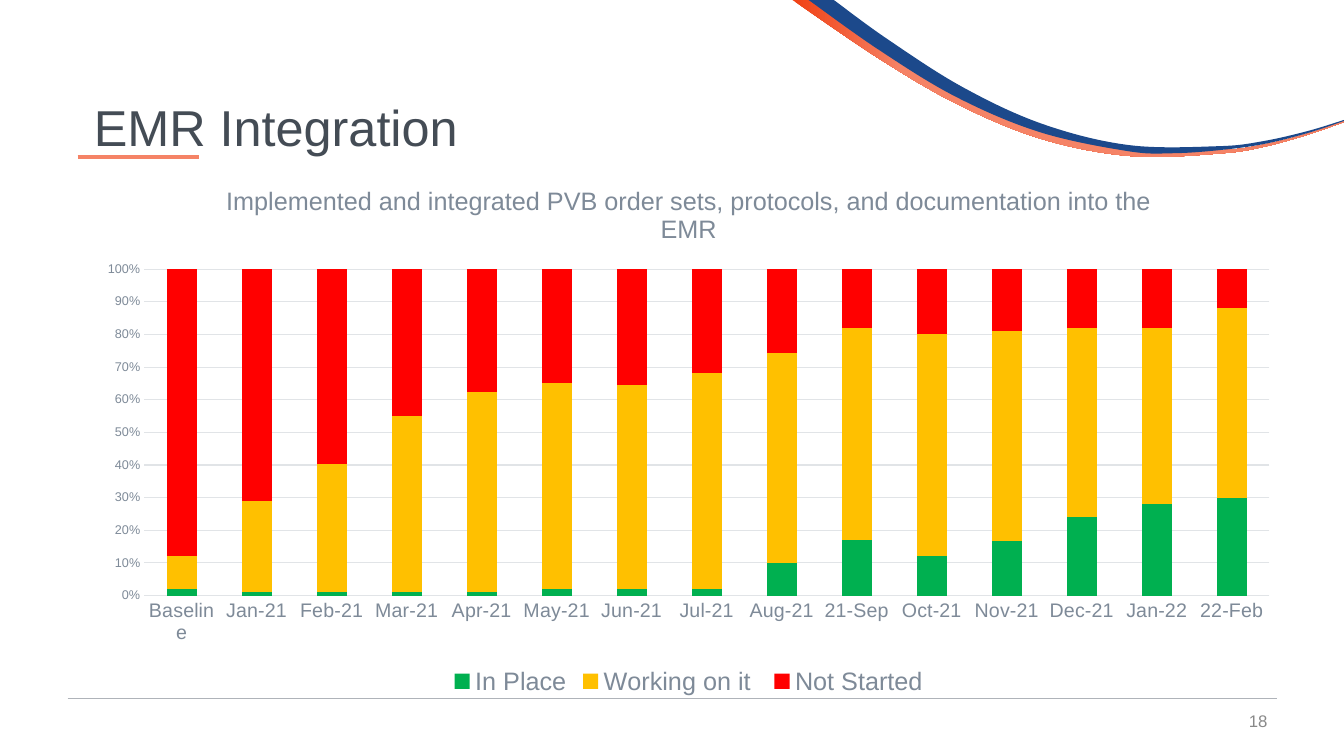
import pptx
import pptx.chart.data
import pptx.dml.color
import pptx.enum.chart
import pptx.enum.shapes
import pptx.enum.text
import pptx.oxml
import pptx.oxml.ns
import pptx.util

RGB = pptx.dml.color.RGBColor
Inches = pptx.util.Inches
Pt = pptx.util.Pt
XL = pptx.enum.chart
TXT = pptx.enum.text
qn = pptx.oxml.ns.qn

WHITE = RGB(0xFF, 0xFF, 0xFF)
INK = RGB(0x44, 0x4C, 0x55)
SLATE = RGB(0x7E, 0x8A, 0x98)
GRAY = RGB(0x89, 0x89, 0x89)
RULE = RGB(0xAF, 0xB3, 0xB9)
GRID = RGB(0xE1, 0xE4, 0xE7)
FLAME = RGB(0xF0, 0x41, 0x15)
CORAL = RGB(0xF5, 0x83, 0x66)
NAVY = RGB(0x1C, 0x49, 0x8B)
GREEN = RGB(0x00, 0xB0, 0x50)
AMBER = RGB(0xFF, 0xC0, 0x00)
RED = RGB(0xFF, 0x00, 0x00)

WIDE, HIGH = 13.33, 7.5
LEFT, TOP, SPAN, TALL = 0.83, 1.62, 12, 5.33
DRAW = "http://schemas.openxmlformats.org/drawingml/2006/main"


def style(font, size, color):
    looks = {"name": "Arial", "size": Pt(size), "bold": False}
    for key, value in looks.items():
        setattr(font, key, value)
    font.color.rgb = color


def curve(shape, turn):
    """Bend the outline's straight segments into Bezier curves, with a corner at turn."""
    path = shape.element.find(".//" + qn("a:path"))
    knots = [(int(p.get("x")), int(p.get("y"))) for p in path.iter(qn("a:pt"))]
    legs = path.findall(qn("a:lnTo"))
    for first, last in ((0, turn - 1), (turn, len(legs))):
        for i in range(first, last):
            a, b = knots[max(i - 1, first)], knots[i]
            c, d = knots[i + 1], knots[min(i + 2, last)]
            spots = ([q + (r - p) / 6 for p, q, r in zip(a, b, c)],
                     [q - (r - p) / 6 for p, q, r in zip(b, c, d)], c)
            points = "".join(f'<a:pt x="{x:.0f}" y="{y:.0f}"/>' for x, y in spots)
            path.replace(legs[i], pptx.oxml.parse_xml(
                f'<a:cubicBezTo xmlns:a="{DRAW}">{points}</a:cubicBezTo>'))


deck = pptx.Presentation()
deck.slide_width, deck.slide_height = Inches(WIDE), Inches(HIGH)
slide = deck.slides.add_slide(deck.slide_layouts[5])
slide.background.fill.solid()
slide.background.fill.fore_color.rgb = WHITE
shapes = slide.shapes

# Two swooshes, each an upper and a lower edge
waves = [
    ([(8.05, 0), (8.82, 0.54), (9.58, 0.99), (10.39, 1.33), (11.25, 1.5),
      (12.12, 1.49), (12.56, 1.43), (12.99, 1.32), (13.33, 1.2)],
     [(7.86, 0), (8.78, 0.62), (9.55, 1.06), (10.37, 1.39), (11.24, 1.55),
      (12.13, 1.52), (12.56, 1.45), (12.99, 1.33), (13.33, 1.21)]),
    ([(8.27, 0), (8.79, 0.38), (9.54, 0.86), (10.34, 1.23), (11.2, 1.44),
      (12.09, 1.45), (12.53, 1.4), (12.97, 1.3), (13.33, 1.19)],
     [(8.02, 0), (8.71, 0.49), (9.48, 0.96), (10.31, 1.31), (11.19, 1.5),
      (11.64, 1.52), (12.09, 1.49), (12.53, 1.43), (12.97, 1.32), (13.33, 1.2)]),
]
bands = []
for upper, lower in waves:
    edge = [(Inches(x), Inches(y)) for x, y in upper + lower[::-1]]
    pen = shapes.build_freeform(*edge[0])
    pen.add_line_segments(edge[1:], close=True)
    band = pen.convert_to_shape()
    curve(band, len(upper))
    band.shadow.inherit = False
    band.line.fill.background()
    bands.append(band)

coral, navy = bands
coral.fill.gradient()
coral.fill.gradient_angle = 0
for stop, spot, color in zip(coral.fill.gradient_stops, (0, 0.2), (FLAME, CORAL)):
    stop.position = spot
    stop.color.rgb = color
navy.fill.solid()
navy.fill.fore_color.rgb = NAVY

# Footer rule and title underline
for start, end, y, color, width in ((0.67, 12.67, 6.93, RULE, 0.5),
                                    (0.77, 1.97, 1.56, CORAL, 2.5)):
    line = shapes.add_connector(pptx.enum.shapes.MSO_CONNECTOR.STRAIGHT,
                                Inches(start), Inches(y), Inches(end), Inches(y))
    line.line.color.rgb = color
    line.line.width = Pt(width)
    props = line.element.find(qn("p:spPr"))
    props.append(pptx.oxml.parse_xml(f'<a:effectLst xmlns:a="{DRAW}"/>'))

# Title and page number
title = shapes.title
place = {"left": LEFT, "top": 0.57, "width": SPAN, "height": 1.45}
for key, value in place.items():
    setattr(title, key, Inches(value))
page = shapes.add_textbox(Inches(9.67), Inches(6.95), Inches(3), Inches(0.4))
for box, text, size, color, align in (
        (title, "EMR Integration", 36, INK, TXT.PP_ALIGN.LEFT),
        (page, "18", 12, GRAY, TXT.PP_ALIGN.RIGHT)):
    frame = box.text_frame
    frame.text = text
    frame.word_wrap = True
    frame.auto_size = TXT.MSO_AUTO_SIZE.NONE
    frame.vertical_anchor = TXT.MSO_ANCHOR.MIDDLE
    frame.paragraphs[0].alignment = align
    style(frame.paragraphs[0].runs[0].font, size, color)
title.text_frame.paragraphs[0].line_spacing = 0.9

# Monthly status chart
series = [
    ("In Place", GREEN,
     (2, 1, 1, 1, 1, 2, 2, 2, 10, 17, 12, 17, 24, 28, 30)),
    ("Working on it ", AMBER,
     (10, 28, 39, 54, 62, 63, 63, 67, 65, 65, 68, 65, 58, 54, 58)),
    ("Not Started", RED,
     (88, 71, 59, 45, 38, 35, 36, 32, 26, 18, 20, 19, 18, 18, 12)),
]
data = pptx.chart.data.CategoryChartData()
data.categories = ["Baseline", "Jan-21", "Feb-21", "Mar-21", "Apr-21",
                   "May-21", "Jun-21", "Jul-21", "Aug-21", "21-Sep",
                   "Oct-21", "Nov-21", "Dec-21", "Jan-22", "22-Feb"]
for name, color, values in series:
    data.add_series(name, values)
chart = shapes.add_chart(XL.XL_CHART_TYPE.COLUMN_STACKED_100, Inches(LEFT),
                         Inches(TOP), Inches(SPAN), Inches(TALL), data).chart
style(chart.font, 10, INK)

plot = chart.plots[0]
plot.gap_width, plot.overlap = 150, 100
plot.vary_by_categories = False
for bar, (name, color, values) in zip(plot.series, series):
    bar.format.fill.solid()
    bar.format.fill.fore_color.rgb = color

chart.has_title = True
head = chart.chart_title.text_frame
head.text = ("Implemented and integrated PVB order sets, protocols, "
             "and documentation into the EMR")
style(head.paragraphs[0].runs[0].font, 18, SLATE)

chart.has_legend = True
chart.legend.position = XL.XL_LEGEND_POSITION.BOTTOM
chart.legend.include_in_layout = False
style(chart.legend.font, 18, SLATE)

months, share = chart.category_axis, chart.value_axis
for axis, size in ((months, 14), (share, 9)):
    axis.major_tick_mark = axis.minor_tick_mark = XL.XL_TICK_MARK.NONE
    style(axis.tick_labels.font, size, SLATE)
share.has_major_gridlines = True
share.tick_labels.number_format = "0%"
share.tick_labels.number_format_is_linked = False
share.format.line.fill.background()
for line in (months.format.line, share.major_gridlines.format.line):
    line.color.rgb = GRID
    line.width = Pt(0.75)

# Inner plot area as shares of the chart
area = chart.element.find(".//" + qn("c:plotArea"))
for old in area.findall(qn("c:layout")):
    area.remove(old)
sizes = {"x": 0.6 / SPAN, "y": 1.05 / TALL, "w": 11.16 / SPAN, "h": 3.24 / TALL}
area.insert(0, pptx.oxml.parse_xml(
    '<c:layout xmlns:c="http://schemas.openxmlformats.org/drawingml/2006/chart">'
    '<c:manualLayout><c:layoutTarget val="inner"/>'
    '<c:xMode val="edge"/><c:yMode val="edge"/>'
    + "".join(f'<c:{key} val="{value:.4f}"/>' for key, value in sizes.items())
    + '</c:manualLayout></c:layout>'))

deck.save("out.pptx")
